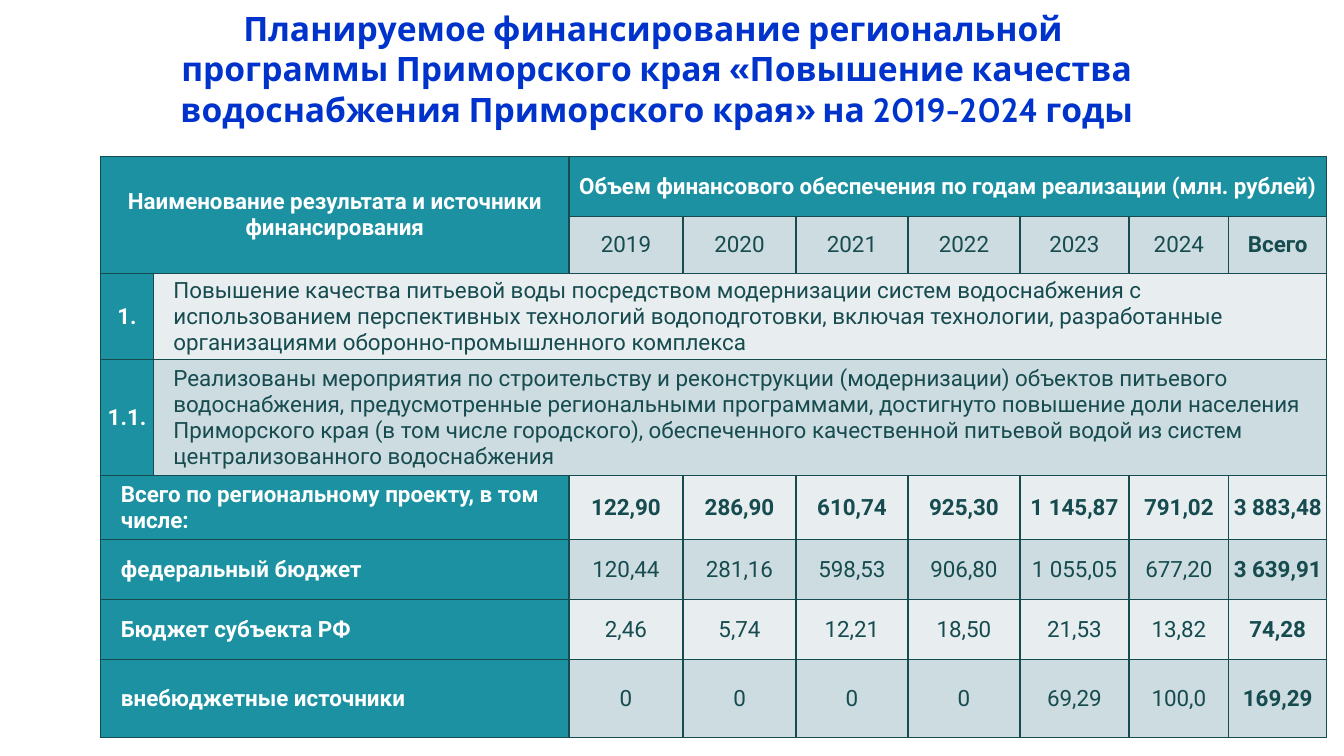
from lxml.etree import SubElement
from pptx import Presentation
from pptx.dml.color import RGBColor
from pptx.enum.text import MSO_ANCHOR, MSO_AUTO_SIZE, PP_ALIGN
from pptx.oxml.ns import qn
from pptx.util import Inches, Pt

COLORS = {
    "title": "0033CC",
    "teal": "1B91A1",
    "light": "E8EEF0",
    "medium": "CDDCE0",
    "dark": "164B4F",
    "white": "FFFFFF",
}
TITLE = ("Планируемое финансирование региональной  программы Приморского края "
         "«Повышение качества водоснабжения Приморского края» на 2019-2024 годы")
RESULT_HEADER = "Наименование результата и источники финансирования"
VOLUME_HEADER = "Объем финансового обеспечения по годам реализации (млн. рублей)"
YEARS = ["2019", "2020", "2021", "2022", "2023", "2024", "Всего"]
RESULTS = [
    ("1.", "Повышение качества питьевой воды посредством модернизации систем "
           "водоснабжения с использованием перспективных технологий водоподготовки, "
           "включая технологии, разработанные организациями оборонно-промышленного комплекса"),
    ("1.1.", "Реализованы мероприятия по строительству и реконструкции (модернизации) "
             "объектов питьевого водоснабжения, предусмотренные региональными программами, "
             "достигнуто повышение доли населения Приморского края (в том числе городского), "
             "обеспеченного качественной питьевой водой из систем централизованного водоснабжения"),
]
SOURCES = [
    ("Всего по региональному проекту, в том числе:",
     ["122,90", "286,90", "610,74", "925,30", "1 145,87", "791,02", "3 883,48"]),
    ("федеральный бюджет",
     ["120,44", "281,16", "598,53", "906,80", "1 055,05", "677,20", "3 639,91"]),
    ("Бюджет субъекта РФ",
     ["2,46", "5,74", "12,21", "18,50", "21,53", "13,82", "74,28"]),
    ("внебюджетные источники",
     ["0", "0", "0", "0", "69,29", "100,0", "169,29"]),
]
COLUMN_WIDTHS = [0.52, 4.12, 1.13, 1.12, 1.11, 1.11, 1.08, 0.99, 0.97]
ROW_HEIGHTS = [0.6, 0.56, 0.86, 1.15, 0.63, 0.6, 0.59, 0.78]
FIRST_YEAR_COLUMN = 2
FIRST_RESULT_ROW = 2
FIRST_SOURCE_ROW = 4


def color(name):
    """Return the named palette colour."""
    return RGBColor.from_string(COLORS[name])


def add_title(slide, left, top, width, height):
    """Place the slide title in its placeholder."""
    title = slide.shapes.title
    title.left, title.top = Inches(left), Inches(top)
    title.width, title.height = Inches(width), Inches(height)
    frame = title.text_frame
    frame.text = TITLE
    frame.word_wrap = True
    frame.auto_size = MSO_AUTO_SIZE.SHAPE_TO_FIT_TEXT
    frame.vertical_anchor = MSO_ANCHOR.TOP
    paragraph = frame.paragraphs[0]
    paragraph.alignment = PP_ALIGN.CENTER
    paragraph.font.name = "Cabin"
    paragraph.font.size = Pt(24)
    paragraph.font.bold = True
    paragraph.font.color.rgb = color("title")


def add_borders(cell):
    """Draw a thin dark line on all four sides of a cell."""
    properties = cell._tc.get_or_add_tcPr()
    for position, side in enumerate(["a:lnL", "a:lnR", "a:lnT", "a:lnB"]):
        line = properties.makeelement(qn(side), {"w": str(Pt(1))})
        fill = SubElement(line, qn("a:solidFill"))
        SubElement(fill, qn("a:srgbClr"), val=COLORS["dark"])
        properties.insert(position, line)


def fill_cell(cell, text, fill, bold=False, centered=True):
    """Write one cell with its fill, alignment and font."""
    cell.fill.solid()
    cell.fill.fore_color.rgb = color(fill)
    cell.margin_left = Inches(0.01 if centered else 0.2)
    cell.margin_right = Inches(0.01)
    cell.margin_top = cell.margin_bottom = 0
    cell.vertical_anchor = MSO_ANCHOR.MIDDLE
    cell.text = text
    paragraph = cell.text_frame.paragraphs[0]
    paragraph.alignment = PP_ALIGN.CENTER if centered else PP_ALIGN.LEFT
    paragraph.font.name = "Roboto"
    paragraph.font.size = Pt(16)
    paragraph.font.bold = bold
    paragraph.font.color.rgb = color("white" if fill == "teal" else "dark")


def fill_years(table, row, values, fill, all_bold=False):
    """Write the year columns of a row, with the total in bold."""
    for index, value in enumerate(values):
        bold = all_bold or index == len(values) - 1
        fill_cell(table.cell(row, FIRST_YEAR_COLUMN + index), value, fill, bold)


def add_financing_table(slide, left, top, width, height):
    """Build the table of financing by source and year."""
    table = slide.shapes.add_table(
        len(ROW_HEIGHTS), len(COLUMN_WIDTHS),
        Inches(left), Inches(top), Inches(width), Inches(height)).table
    table.first_row = table.horz_banding = False
    for column, share in zip(table.columns, COLUMN_WIDTHS):
        column.width = Inches(width * share / sum(COLUMN_WIDTHS))
    for row, share in zip(table.rows, ROW_HEIGHTS):
        row.height = Inches(height * share / sum(ROW_HEIGHTS))
    for cell in table.iter_cells():
        add_borders(cell)

    last_column = len(COLUMN_WIDTHS) - 1
    table.cell(0, 0).merge(table.cell(1, 1))
    fill_cell(table.cell(0, 0), RESULT_HEADER, "teal", bold=True)
    table.cell(0, FIRST_YEAR_COLUMN).merge(table.cell(0, last_column))
    fill_cell(table.cell(0, FIRST_YEAR_COLUMN), VOLUME_HEADER, "teal", bold=True)
    fill_years(table, 1, YEARS, "medium")

    bands = ["light", "medium"]
    for index, (number, result) in enumerate(RESULTS):
        row = FIRST_RESULT_ROW + index
        table.cell(row, 1).merge(table.cell(row, last_column))
        fill_cell(table.cell(row, 0), number, "teal", bold=True)
        fill_cell(table.cell(row, 1), result, bands[index % 2], centered=False)

    for index, (source, values) in enumerate(SOURCES):
        row = FIRST_SOURCE_ROW + index
        table.cell(row, 0).merge(table.cell(row, 1))
        fill_cell(table.cell(row, 0), source, "teal", bold=True, centered=False)
        fill_years(table, row, values, bands[index % 2], all_bold=index == 0)


def main():
    """Create the presentation and save it."""
    presentation = Presentation()
    presentation.slide_width = Inches(13.33)
    presentation.slide_height = Inches(7.5)
    slide = presentation.slides.add_slide(presentation.slide_layouts[5])
    add_title(slide, 1.62, 0.03, 9.79, 1.31)
    add_financing_table(slide, 1, 1.55, 12.16, 5.77)
    presentation.save("out.pptx")


if __name__ == "__main__":
    main()
